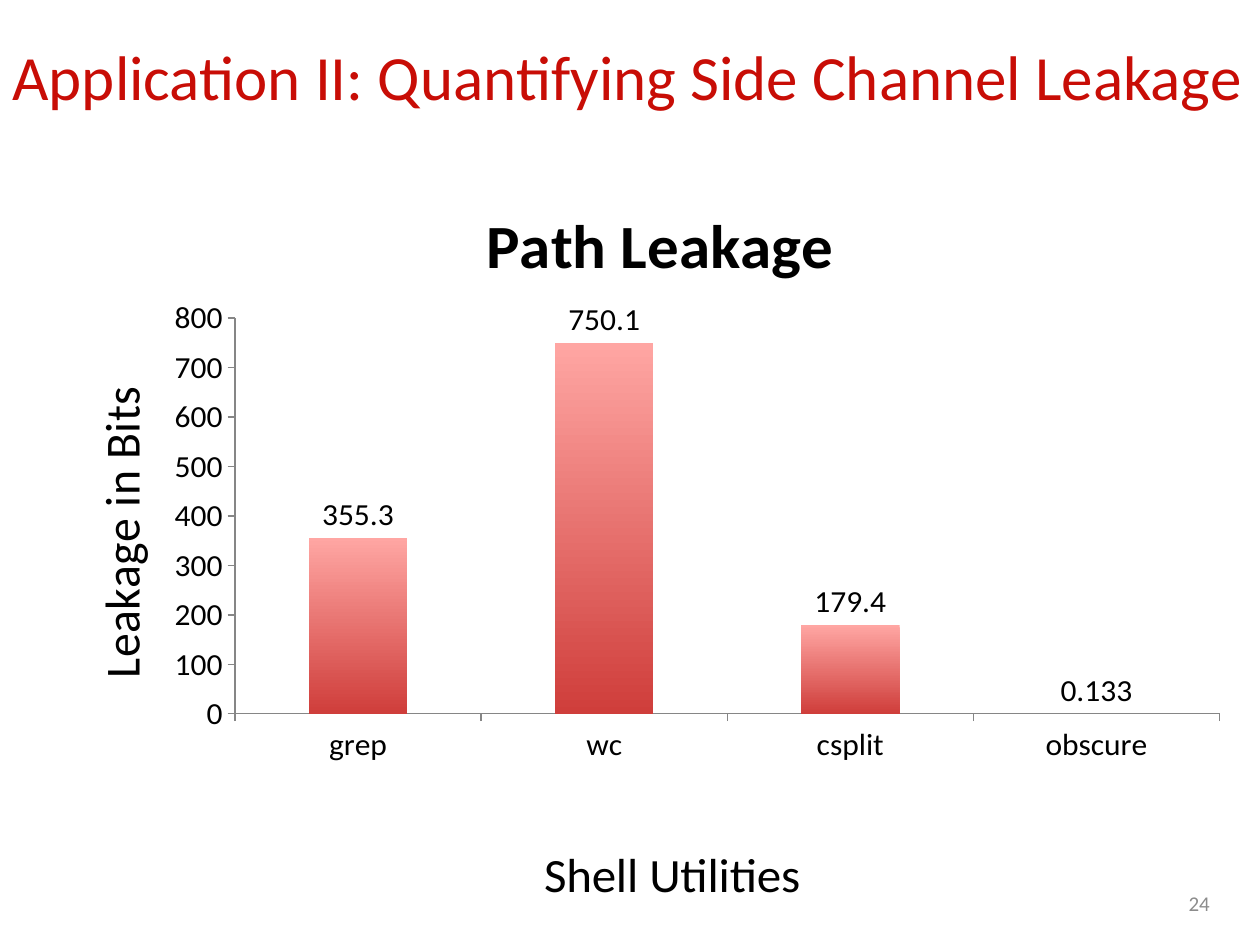
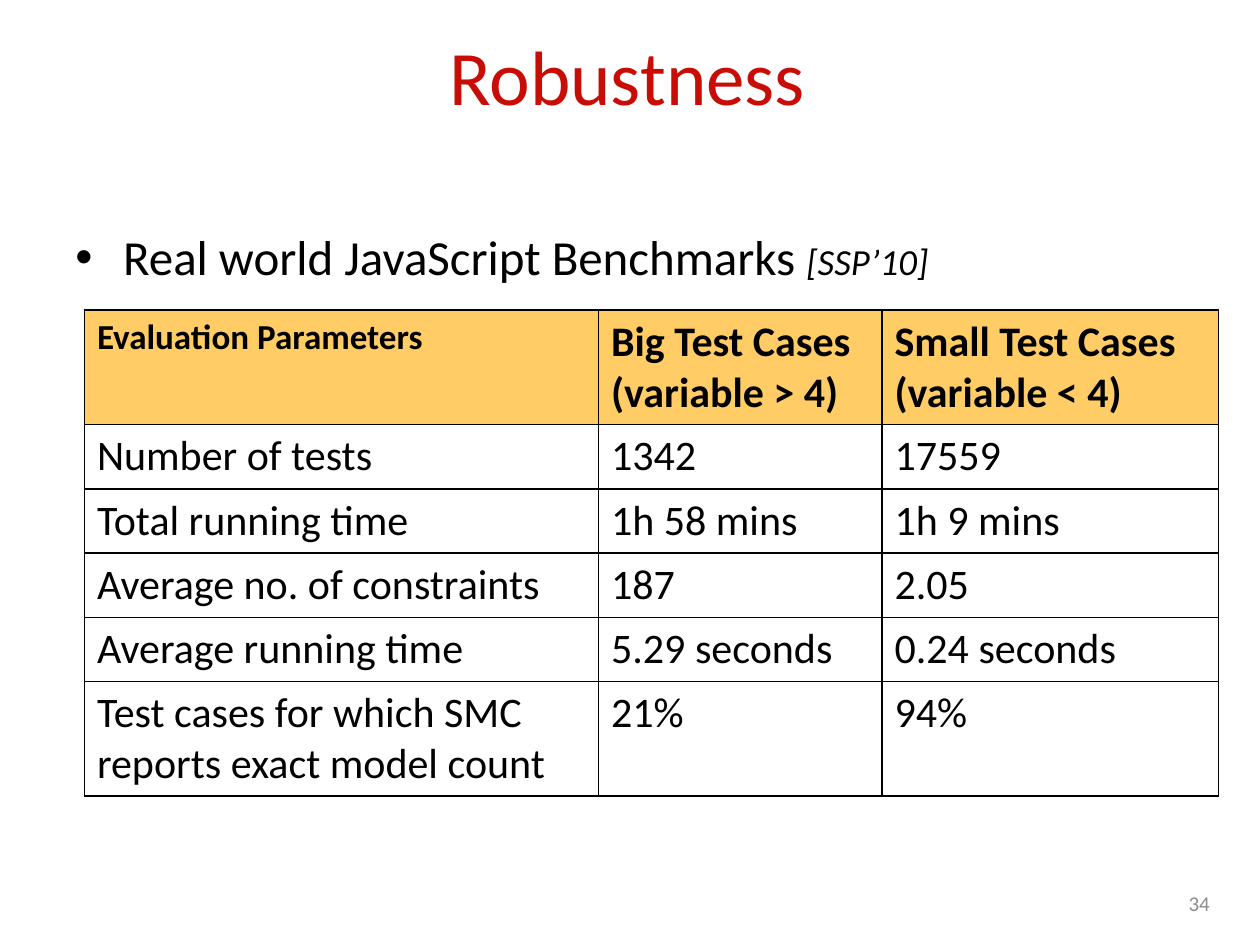
from pptx import Presentation
from pptx.chart.data import CategoryChartData as ChartData
from pptx.dml.color import RGBColor as Color
from pptx.enum.chart import XL_CHART_TYPE as ChartType
from pptx.enum.chart import XL_LABEL_POSITION as LabelPosition
from pptx.enum.chart import XL_TICK_MARK as TickMark
from pptx.enum.text import MSO_ANCHOR as Anchor
from pptx.enum.text import MSO_AUTO_SIZE as AutoSize
from pptx.enum.text import PP_ALIGN as Align
from pptx.oxml import parse_xml
from pptx.oxml.ns import nsdecls, qn
from pptx.util import Pt

PX = 9144
FONT = "Calibri"
COLORS = {
    "title": "C80D06",
    "text": "000000",
    "number": "8C8C8C",
    "header": "FFCC66",
    "border": "000000",
    "axis": "868686",
    "bar_top": "FFA6A3",
    "bar_bottom": "CF3E3B",
}


def px(*lengths):
    return [length * PX for length in lengths]


def color(name):
    return Color.from_string(COLORS[name])


def style_font(font, size, ink="text", bold=False, italic=False):
    font.name = FONT
    font.size = Pt(size)
    font.bold = bold
    font.italic = italic
    font.color.rgb = color(ink)


def add_span(para, text, align=None, **style):
    span = para.add_run()
    span.text = text
    style_font(span.font, **style)
    if align is not None:
        para.alignment = align


def place_in_chart(element, **fractions):
    for old in element.findall(qn("c:layout")):
        element.remove(old)
    target = '<c:layoutTarget val="inner"/>' if "w" in fractions else ""
    modes = "".join(f'<c:{key}Mode val="edge"/>' for key in "xy")
    values = "".join(f'<c:{key} val="{value}"/>' for key, value in fractions.items())
    layout = parse_xml(
        f'<c:layout {nsdecls("c")}><c:manualLayout>{target}{modes}{values}'
        "</c:manualLayout></c:layout>"
    )
    element.insert(0 if element.find(qn("c:tx")) is None else 1, layout)


class SlideBuilder:
    def __init__(self, deck):
        self.deck = deck
        self.page = None

    def start(self, title, size, number):
        self.page = self.deck.slides.add_slide(self.deck.slide_layouts[5])
        box = self.page.shapes.title
        box.left, box.top, box.width, box.height = px(-4, -3, 1004, 125)
        frame = box.text_frame
        frame.auto_size = AutoSize.NONE
        frame.vertical_anchor = Anchor.MIDDLE
        frame.margin_left = frame.margin_right = 0
        add_span(frame.paragraphs[0], title, Align.CENTER, size=size, ink="title")
        para = self.text_box(710, 697, 260, 40, Anchor.MIDDLE)
        add_span(para, str(number), Align.RIGHT, size=12, ink="number")

    def text_box(self, left, top, width, height, anchor=Anchor.TOP):
        box = self.page.shapes.add_textbox(*px(left, top, width, height))
        frame = box.text_frame
        frame.word_wrap = True
        frame.vertical_anchor = anchor
        return frame.paragraphs[0]

    def bullet(self, left, top, width, height, spans, indent=38):
        para = self.text_box(left, top, width, height)
        para.space_before = Pt(2)
        properties = para._p.get_or_add_pPr()
        properties.set("marL", str(indent * PX))
        properties.set("indent", str(-indent * PX))
        properties.append(parse_xml(f'<a:buFont {nsdecls("a")} typeface="Arial"/>'))
        properties.append(parse_xml(f'<a:buChar {nsdecls("a")} char="•"/>'))
        for text, style in spans:
            add_span(para, text, **style)

    def table(self, left, top, widths, heights, rows):
        frame = self.page.shapes.add_table(
            len(rows), len(widths), *px(left, top, sum(widths), sum(heights))
        )
        table = frame.table
        table.first_row = table.horz_banding = False
        for column, width in zip(table.columns, widths):
            column.width = width * PX
        for row, height, texts in zip(table.rows, heights, rows):
            row.height = height * PX
            for cell, text in zip(row.cells, texts):
                self.table_cell(cell, text, header=texts is rows[0])

    def table_cell(self, cell, text, header):
        properties = cell._tc.get_or_add_tcPr()
        for side in "LRTB":
            properties.append(parse_xml(
                f'<a:ln{side} {nsdecls("a")} w="12700"><a:solidFill>'
                f'<a:srgbClr val="{COLORS["border"]}"/></a:solidFill></a:ln{side}>'
            ))
        if header:
            cell.fill.solid()
            cell.fill.fore_color.rgb = color("header")
        else:
            cell.fill.background()
        lines = text.split("\n")
        size = 20 if header and len(lines) == 1 else 24
        frame = cell.text_frame
        for index, line in enumerate(lines):
            para = frame.add_paragraph() if index else frame.paragraphs[0]
            add_span(para, line, size=size, bold=header)

    def column_chart(self, left, top, width, height, title, values, axis_titles):
        data = ChartData()
        data.categories = list(values)
        data.add_series(title, list(values.values()))
        frame = self.page.shapes.add_chart(
            ChartType.COLUMN_CLUSTERED, *px(left, top, width, height), data
        )
        chart = frame.chart
        style_font(chart.font, 18)
        chart.has_legend = False
        chart.has_title = True
        self.chart_title(chart.chart_title, title, 36, 0.36, 0.05, bold=True)
        place_in_chart(
            next(chart.element.iter(qn("c:plotArea"))), x=0.16, y=0.22, w=0.82, h=0.53
        )

        axes = (chart.category_axis, chart.value_axis)
        corners = ((0.41, 0.91), (0.03, 0.31))
        for axis, text, corner in zip(axes, axis_titles, corners):
            axis.has_major_gridlines = False
            axis.major_tick_mark = TickMark.OUTSIDE
            axis.minor_tick_mark = TickMark.NONE
            axis.format.line.color.rgb = color("axis")
            axis.format.line.width = Pt(0.75)
            style_font(axis.tick_labels.font, 18)
            self.chart_title(axis.axis_title, text, 28, *corner)
        value_axis = chart.value_axis
        value_axis.minimum_scale, value_axis.maximum_scale = 0, 800
        value_axis.major_unit = 100
        body = next(value_axis.axis_title.element.iter(qn("a:bodyPr")))
        body.set("rot", "-5400000")
        body.set("vert", "horz")

        plot = chart.plots[0]
        plot.gap_width = 150
        plot.vary_by_categories = False
        plot.has_data_labels = True
        labels = plot.data_labels
        labels.show_value = True
        labels.position = LabelPosition.OUTSIDE_END
        style_font(labels.font, 18)
        fill = plot.series[0].format.fill
        fill.gradient()
        fill.gradient_angle = 270
        for stop, name in zip(fill.gradient_stops, ("bar_top", "bar_bottom")):
            stop.color.rgb = color(name)

    def chart_title(self, title, text, size, x, y, bold=False):
        add_span(title.text_frame.paragraphs[0], text, size=size, bold=bold)
        place_in_chart(title.element, x=x, y=y)


def main():
    deck = Presentation()
    deck.slide_width, deck.slide_height = px(1000, 750)
    builder = SlideBuilder(deck)

    builder.start("Application II: Quantifying Side Channel Leakage", 36, 24)
    builder.column_chart(
        34, 122, 953, 608,
        "Path Leakage",
        {"grep": 355.3, "wc": 750.1, "csplit": 179.4, "obscure": 0.133},
        ("Shell Utilities", "Leakage in Bits"),
    )

    builder.start("Robustness", 44, 34)
    builder.table(
        67, 246, (408, 225, 267), (91, 51, 51, 51, 51, 91),
        [
            ("Evaluation Parameters", "Big Test Cases\n(variable > 4)",
             "Small Test Cases\n(variable < 4)"),
            ("Number of tests", "1342", "17559"),
            ("Total running time", "1h 58 mins", "1h 9 mins"),
            ("Average no. of constraints", "187", "2.05"),
            ("Average running time", "5.29 seconds", "0.24 seconds"),
            ("Test cases for which SMC reports exact model count", "21%", "94%"),
        ],
    )
    builder.bullet(50, 175, 900, 495, [
        ("Real world JavaScript Benchmarks ", {"size": 28}),
        ("[SSP’10]", {"size": 21, "italic": True}),
    ])

    deck.save("out.pptx")


if __name__ == "__main__":
    main()
